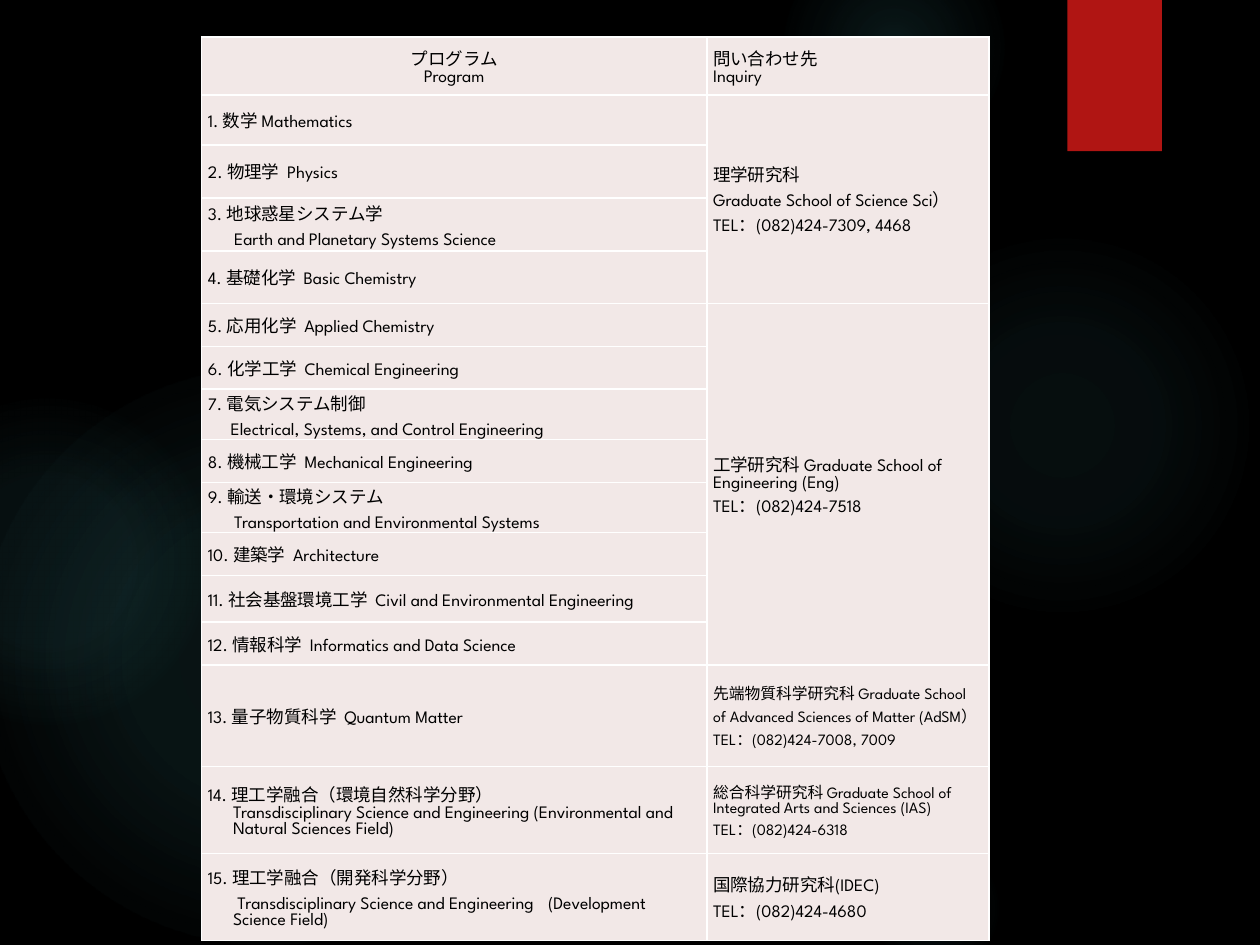
from dataclasses import dataclass

from lxml import etree
from pptx import Presentation
from pptx.dml.color import RGBColor
from pptx.enum.shapes import MSO_SHAPE
from pptx.enum.text import MSO_ANCHOR, PP_ALIGN
from pptx.oxml.ns import qn
from pptx.util import Pt

OVAL, RECT = MSO_SHAPE.OVAL, MSO_SHAPE.RECTANGLE
MIDDLE = MSO_ANCHOR.MIDDLE
LEFT, CENTER, JUSTIFY = PP_ALIGN.LEFT, PP_ALIGN.CENTER, PP_ALIGN.JUSTIFY


@dataclass
class Theme:
    font: str = "League Spartan"
    size: int = 10
    small: int = 9
    ink: str = "000000"
    ground: str = "000000"
    glow: str = "50B9C1"
    accent: str = "B01513"
    cell: str = "F2E8E7"
    border: str = "FFFFFF"


@dataclass
class Line:
    text: str
    indent: float = 0
    before: float = 0
    tab: float = 0


def add_xml(parent, tag, **attrs):
    return etree.SubElement(parent, qn(tag), {k: str(v) for k, v in attrs.items()})


def add_color(parent, color, alpha=None):
    clr = add_xml(parent, "a:srgbClr", val=color)
    if alpha is not None:
        add_xml(clr, "a:alpha", val=alpha * 1000)


class Deck:
    def __init__(self, theme, width, height):
        self.theme = theme
        self.prs = Presentation()
        self.prs.slide_width, self.prs.slide_height = Pt(width), Pt(height)
        self.slide = None

    def add_slide(self):
        self.slide = self.prs.slides.add_slide(self.prs.slide_layouts[6])
        fill = self.slide.background.fill
        fill.solid()
        fill.fore_color.rgb = RGBColor.from_string(self.theme.ground)

    def shape(self, kind, x, y, w, h):
        sp = self.slide.shapes.add_shape(kind, Pt(x), Pt(y), Pt(w), Pt(h))
        sp.shadow.inherit = False
        sp.line.fill.background()
        return sp

    def glow(self, x, y, size, stops):
        sp = self.shape(OVAL, x, y, size, size)
        sp.fill.background()
        grad = etree.Element(qn("a:gradFill"), rotWithShape="1")
        gs_lst = add_xml(grad, "a:gsLst")
        for pos, alpha in stops:
            add_color(add_xml(gs_lst, "a:gs", pos=pos * 1000), self.theme.glow, alpha)
        circle = add_xml(grad, "a:path", path="circle")
        add_xml(circle, "a:fillToRect", l=50000, t=50000, r=50000, b=50000)
        no_fill = sp._element.spPr.find(qn("a:noFill"))
        no_fill.getparent().replace(no_fill, grad)

    def block(self, x, y, w, h):
        sp = self.shape(RECT, x, y, w, h)
        sp.fill.solid()
        sp.fill.fore_color.rgb = RGBColor.from_string(self.theme.accent)
        effects = sp._element.spPr.find(qn("a:effectLst"))
        shadow = add_xml(effects, "a:outerShdw", blurRad=Pt(3), dist=Pt(2), dir=5400000)
        add_color(shadow, self.theme.ground, 45)

    def table(self, x, y, widths, heights):
        table = self.slide.shapes.add_table(
            len(heights), len(widths), Pt(x), Pt(y), Pt(sum(widths)), Pt(sum(heights))
        ).table
        table.first_row = table.horz_banding = False
        for column, width in zip(table.columns, widths):
            column.width = Pt(width)
        for row, height in zip(table.rows, heights):
            row.height = Pt(height)
        for cell in table.iter_cells():
            self.style_cell(cell)
        return table

    def style_cell(self, cell):
        cell.margin_left = cell.margin_right = Pt(3.6)
        cell.margin_top = cell.margin_bottom = 0
        cell.vertical_anchor = MIDDLE
        tc_pr = cell._tc.get_or_add_tcPr()
        for side in ("a:lnL", "a:lnR", "a:lnT", "a:lnB"):
            ln = add_xml(tc_pr, side, w=Pt(1))
            add_color(add_xml(ln, "a:solidFill"), self.theme.border)
        cell.fill.solid()
        cell.fill.fore_color.rgb = RGBColor.from_string(self.theme.cell)

    def cell_text(self, cell, lines, size, align=LEFT):
        tf = cell.text_frame
        for i, line in enumerate(lines):
            p = tf.add_paragraph() if i else tf.paragraphs[0]
            p.text = line.text
            p.alignment = align
            p.space_before = Pt(line.before)
            p.font.name = self.theme.font
            p.font.size = Pt(size)
            p.font.color.rgb = RGBColor.from_string(self.theme.ink)
            p_pr = p._p.get_or_add_pPr()
            p_pr.set("marL", str(Pt(line.indent)))
            p_pr.set("indent", "0")
            if line.tab:
                tabs = etree.Element(qn("a:tabLst"))
                add_xml(tabs, "a:tab", pos=Pt(line.tab), algn="l")
                p_pr.find(qn("a:defRPr")).addprevious(tabs)


THEME = Theme()
GLOWS = [
    (496, 132, 222, [(0, 7), (36, 6), (69, 0)]),
    (448, -36, 126, [(0, 14), (36, 7), (73, 0)]),
    (496, 480, 78, [(0, 9), (36, 5), (66, 0)]),
    (-12, 210, 330, [(0, 11), (36, 10), (75, 0)]),
    (-66, 228, 186, [(0, 8), (36, 8), (72, 0)]),
]
ROW_HEIGHTS = [33, 28.6, 30.4, 30.3, 30, 24.5, 24.5, 28.8, 24.5,
               28.6, 24.5, 26.8, 24.5, 58, 49.7, 49.7]
PROGRAMS = [
    [Line("数学 Mathematics")],
    [Line("物理学  Physics")],
    [Line("地球惑星システム学"), Line("Earth and Planetary Systems Science", 15, 4.5)],
    [Line("基礎化学  Basic Chemistry")],
    [Line("応用化学  Applied Chemistry")],
    [Line("化学工学  Chemical Engineering")],
    [Line("電気システム制御"),
     Line("Electrical, Systems, and Control Engineering", 13, 4.5)],
    [Line("機械工学  Mechanical Engineering")],
    [Line("輸送・環境システム"),
     Line("Transportation and Environmental Systems", 15, 4.5)],
    [Line("建築学  Architecture")],
    [Line("社会基盤環境工学  Civil and Environmental Engineering")],
    [Line("情報科学  Informatics and Data Science")],
    [Line("量子物質科学  Quantum Matter")],
    [Line("理工学融合（環境自然科学分野）"),
     Line("Transdisciplinary Science and Engineering (Environmental and "
          "Natural Sciences Field)", 14.4)],
    [Line("理工学融合（開発科学分野）"),
     Line(" Transdisciplinary Science and Engineering\t(Development Science Field)",
          14.4, 4.5, 223)],
]
INQUIRIES = [
    (1, 4, THEME.size, ["理学研究科", "Graduate School of Science Sci）",
                        "TEL：(082)424-7309, 4468"]),
    (5, 12, THEME.size, ["工学研究科 Graduate School of Engineering (Eng)",
                         "TEL：(082)424-7518"]),
    (13, 13, THEME.small, ["先端物質科学研究科 Graduate School of Advanced Sciences of Matter (AdSM）",
                           "TEL：(082)424-7008, 7009"]),
    (14, 14, THEME.small, ["総合科学研究科 Graduate School of Integrated Arts and Sciences (IAS)",
                           "TEL：(082)424-6318"]),
    (15, 15, THEME.size, ["国際協力研究科(IDEC)", "TEL：(082)424-4680"]),
]


def main():
    deck = Deck(THEME, 720, 540)
    deck.add_slide()
    for glow in GLOWS:
        deck.glow(*glow)
    deck.block(610, 0, 54, 86.4)
    table = deck.table(115.2, 21.2, [288.7, 161.3], ROW_HEIGHTS)
    headers = [("プログラム", "Program", CENTER), ("問い合わせ先", "Inquiry", JUSTIFY)]
    for column, (japanese, english, align) in enumerate(headers):
        deck.cell_text(table.cell(0, column), [Line(japanese), Line(english)],
                       THEME.size, align)
    for number, (name, *rest) in enumerate(PROGRAMS, 1):
        lines = [Line(f"{number}. {name.text}"), *rest]
        deck.cell_text(table.cell(number, 0), lines, THEME.size)
    for first, last, size, texts in INQUIRIES:
        cell = table.cell(first, 1)
        if last > first:
            cell.merge(table.cell(last, 1))
        deck.cell_text(cell, [Line(text) for text in texts], size)
    deck.prs.save("out.pptx")


if __name__ == "__main__":
    main()
